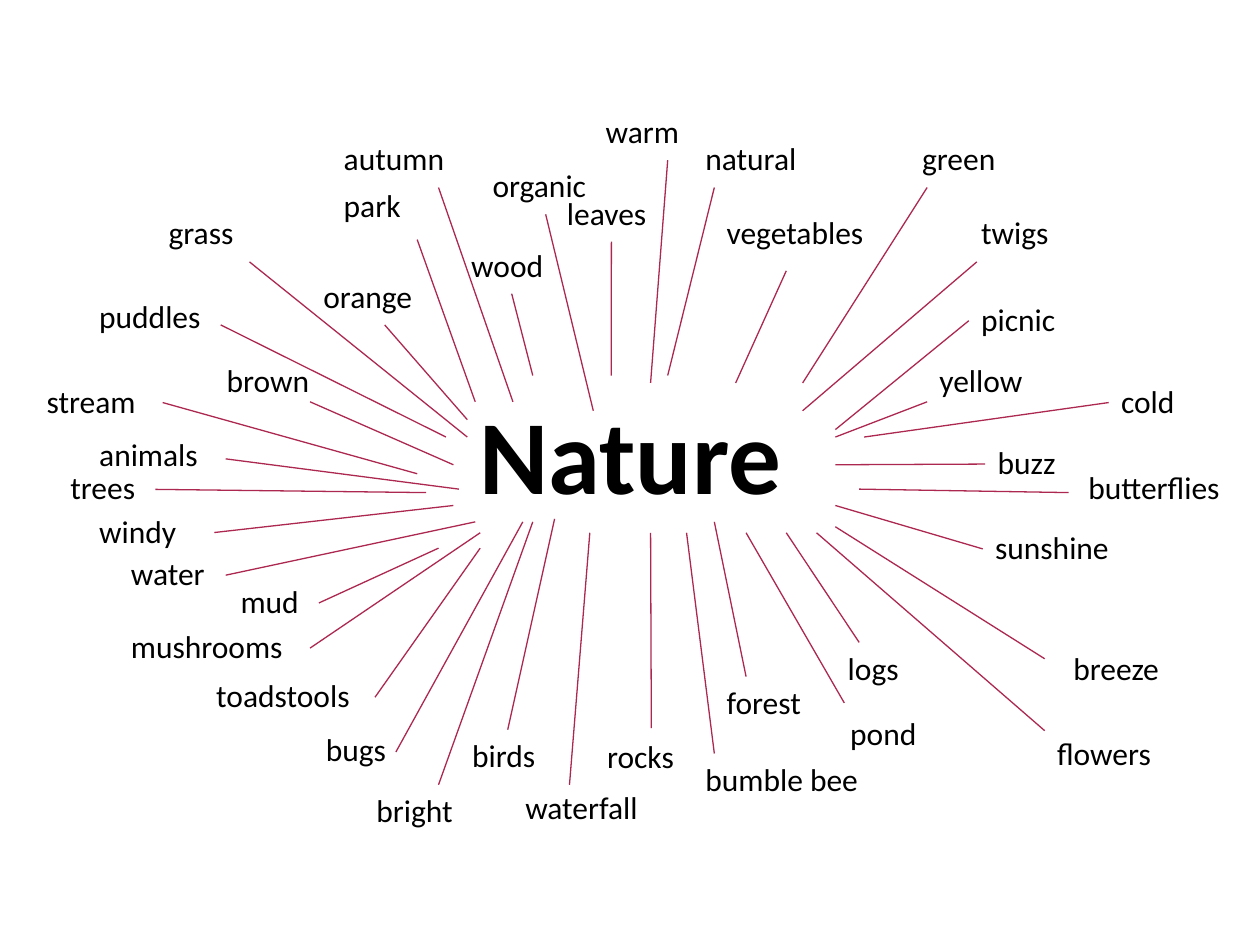
from lxml import etree
from pptx import Presentation
from pptx import util as u
from pptx.dml.color import RGBColor
from pptx.enum import shapes, text
from pptx.oxml.ns import qn

INK = RGBColor(0x00, 0x00, 0x00)
RAY = RGBColor(0xAD, 0x28, 0x51)
TOP, LEFT, BOTTOM, RIGHT = range(4)
HIGH = 1.09
HUB = (9.42, 7.72, 7.39, 3.02)

SNUG = set(
    "puddles wood vegetables twigs pond yellow flowers butterflies grass autumn "
    "leaves animals water mud toadstools mushrooms trees birds".split()
)

# word, left, top, width, ray start, ray end: a side number or a point
WORDS = [
    ("puddles", 1.75, 5.87, 2.77, (4.45, 6.55), (8.99, 8.81)),
    ("wood", 9.25, 4.83, 2.13, BOTTOM, (10.74, 7.57)),
    ("vegetables", 14.4, 4.17, 3.53, (15.85, 5.46), (14.83, 7.72)),
    ("twigs", 19.53, 4.17, 2.01, (19.69, 5.28), (16.18, 8.28)),
    ("pond", 16.89, 14.27, 2.01, (17.02, 14.17), (15.04, 10.74)),
    ("yellow", 18.69, 7.16, 2.36, (18.69, 8.1), (16.84, 8.81)),
    ("sunshine", 19.81, 10.52, 3.15, LEFT, (16.84, 10.19)),
    ("logs", 16.84, 12.95, 3.05, (17.32, 12.95), (15.85, 10.74)),
    ("flowers", 21.06, 14.68, 2.59, (21.06, 14.73), (16.46, 10.74)),
    ("butterflies", 21.69, 9.32, 3.43, (21.54, 9.93), (17.32, 9.86)),
    ("grass", 3.15, 4.17, 1.96, (5.03, 5.28), (9.42, 8.81)),
    ("autumn", 6.68, 2.67, 2.74, (8.84, 3.78), (10.34, 8.1)),
    ("leaves", 11.18, 3.78, 2.29, BOTTOM, (12.32, 7.57)),
    ("animals", 1.75, 8.64, 2.69, (4.55, 9.25), (9.25, 9.86)),
    ("water", 2.39, 11.05, 2.16, RIGHT, (9.58, 10.52)),
    ("mud", 4.6, 11.61, 1.83, RIGHT, (8.84, 11.05)),
    ("toadstools", 4.11, 13.51, 3.45, RIGHT, (9.68, 11.05)),
    ("mushrooms", 2.39, 12.52, 3.86, RIGHT, (9.68, 10.74)),
    ("trees", 1.17, 9.32, 1.96, RIGHT, (8.59, 9.93)),
    ("bugs", 6.32, 14.6, 2.13, (7.98, 15.16), (10.54, 10.52)),
    ("waterfall", 10.34, 15.77, 3.15, (11.48, 15.82), (11.89, 10.74)),
    ("bumble bee", 13.97, 15.19, 4.98, (14.4, 15.19), (13.84, 10.74)),
    ("brown", 4.32, 7.16, 2.36, (6.25, 8.1), (9.14, 9.37)),
    ("natural", 13.97, 2.67, 2.84, (14.4, 3.78), (13.46, 7.57)),
    ("organic", 9.68, 3.23, 2.64, BOTTOM, (11.96, 8.28)),
    ("park", 6.68, 3.63, 2.46, (8.41, 4.83), (9.58, 8.1)),
    ("green", 18.34, 2.67, 3.56, (18.69, 3.78), (16.18, 7.72)),
    ("picnic", 19.53, 5.92, 4.93, LEFT, (16.84, 8.66)),
    ("stream", 0.69, 7.57, 2.59, RIGHT, (8.41, 9.55)),
    ("buzz", 19.86, 8.81, 3.33, LEFT, (16.84, 9.37)),
    ("orange", 6.27, 5.46, 2.97, BOTTOM, (9.42, 8.46)),
    ("windy", 1.75, 10.19, 2.57, RIGHT, (9.14, 10.19)),
    ("warm", 11.96, 2.13, 3.73, (13.46, 3.23), TOP),
    ("cold", 22.35, 7.57, 3.02, LEFT, (17.42, 8.81)),
    ("breeze", 21.39, 12.95, 3.07, (21.06, 13.28), (16.84, 10.62)),
    ("rocks", 11.99, 14.73, 3.05, (13.13, 14.68), BOTTOM),
    ("birds", 9.27, 14.71, 1.93, TOP, (11.18, 10.46)),
    ("bright", 7.34, 15.82, 3.0, TOP, (10.74, 10.52)),
    ("forest", 14.4, 13.64, 2.92, (15.04, 13.64), (14.4, 10.52)),
]


def label(slide, word, area, size=18, bold=False):
    box = slide.shapes.add_textbox(*map(u.Cm, area))
    frame = box.text_frame
    frame.word_wrap = word not in SNUG
    frame.auto_size = text.MSO_AUTO_SIZE.SHAPE_TO_FIT_TEXT
    para = frame.paragraphs[0]
    para.text = word
    font = para.font
    font.name, font.size, font.bold = "Calibri", u.Pt(size), bold
    font.color.rgb = INK
    return box


def ray(slide, box, start, hub, end):
    first = (0, 0) if isinstance(start, int) else start
    last = (0, 0) if isinstance(end, int) else end
    line = slide.shapes.add_connector(
        shapes.MSO_CONNECTOR.STRAIGHT, *map(u.Cm, first + last)
    )
    if isinstance(start, int):
        line.begin_connect(box, start)
    if isinstance(end, int):
        line.end_connect(hub, end)
    line.line.color.rgb = RAY
    line.line.width = u.Pt(0.75)
    etree.SubElement(line._element.spPr, qn("a:effectLst"))


def main():
    deck = Presentation()
    deck.slide_width, deck.slide_height = u.Cm(25.4), u.Cm(19.05)
    slide = deck.slides.add_slide(deck.slide_layouts[6])
    boxes = [label(slide, word, (left, top, wide, HIGH))
             for word, left, top, wide, *_ in WORDS]
    hub = label(slide, "Nature", HUB, 60, True)
    for box, (*_, start, end) in zip(boxes, WORDS):
        ray(slide, box, start, hub, end)
    deck.save("out.pptx")


if __name__ == "__main__":
    main()
